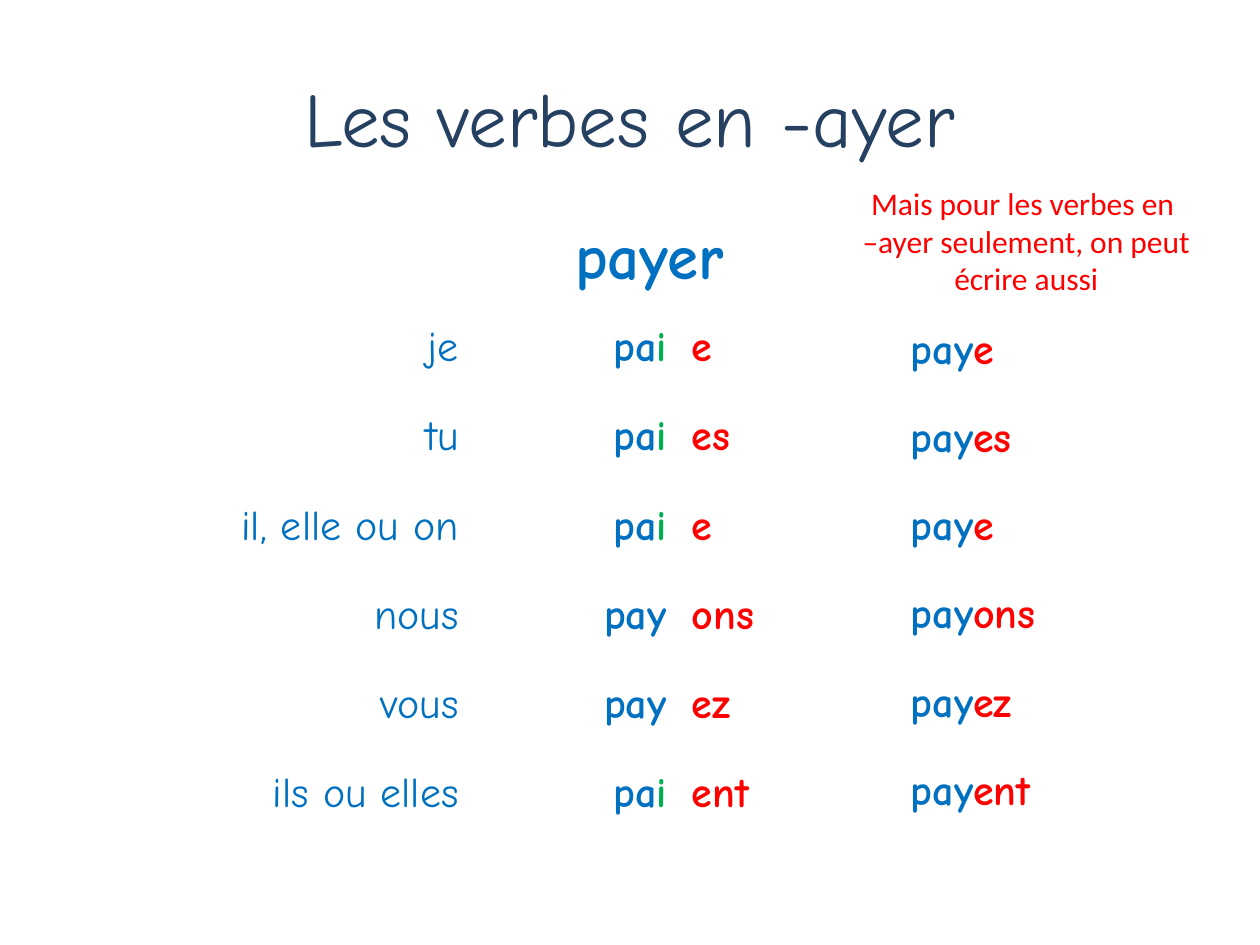
from dataclasses import dataclass

from pptx import Presentation
from pptx.dml.color import RGBColor
from pptx.enum.text import MSO_ANCHOR, PP_ALIGN
from pptx.util import Inches, Pt

LEFT, CENTER, RIGHT = PP_ALIGN.LEFT, PP_ALIGN.CENTER, PP_ALIGN.RIGHT
MIDDLE = MSO_ANCHOR.MIDDLE
TITLE_ONLY = 5
COLUMNS, ROWS = 100, 75


@dataclass(frozen=True)
class Theme:
    navy: str = "254061"
    blue: str = "0070C0"
    green: str = "00B050"
    red: str = "FF0000"
    white: str = "FFFFFF"
    hand: str = "Comic Neue"
    plain: str = "Calibri"
    title: int = 44
    verb: int = 36
    body: int = 24
    note: int = 18


THEME = Theme()


def write(paragraph, text, color=THEME.blue, size=THEME.body, font=THEME.hand,
          bold=False, align=LEFT):
    paragraph.alignment = align
    run = paragraph.add_run()
    run.text = text
    run.font.name = font
    run.font.size = Pt(size)
    run.font.bold = bold
    run.font.color.rgb = RGBColor.from_string(color)


class ConjugationSlide:
    def __init__(self, presentation, theme):
        self.theme = theme
        self.width = presentation.slide_width
        self.height = presentation.slide_height
        layout = presentation.slide_layouts[TITLE_ONLY]
        self.slide = presentation.slides.add_slide(layout)

    def area(self, left, top, width, height):
        column, row = self.width / COLUMNS, self.height / ROWS
        return (round(left * column), round(top * row),
                round(width * column), round(height * row))

    def title(self, text, *place):
        shape = self.slide.shapes.title
        shape.left, shape.top, shape.width, shape.height = self.area(*place)
        shape.text_frame.vertical_anchor = MIDDLE
        write(shape.text_frame.paragraphs[0], text, color=self.theme.navy,
              size=self.theme.title, align=CENTER)

    def text_box(self, lines, *place, line_spacing=None, space_after=0, **style):
        frame = self.slide.shapes.add_textbox(*self.area(*place)).text_frame
        frame.word_wrap = True
        for index, parts in enumerate(lines):
            paragraph = frame.add_paragraph() if index else frame.paragraphs[0]
            paragraph.line_spacing = line_spacing
            paragraph.space_after = Pt(space_after)
            for text, color in parts:
                write(paragraph, text, color=color, **style)

    def cell(self, cell, parts, **style):
        cell.fill.solid()
        cell.fill.fore_color.rgb = RGBColor.from_string(self.theme.white)
        cell.vertical_anchor = MIDDLE
        for text, color in parts:
            write(cell.text_frame.paragraphs[0], text, color=color, **style)

    def verb_table(self, verb, forms, widths, *place):
        theme = self.theme
        table = self.slide.shapes.add_table(
            len(forms) + 1, len(widths), *self.area(*place)).table
        for column, width in zip(table.columns, widths):
            column.width = round(width * self.width / COLUMNS)
        table.cell(0, 0).merge(table.cell(0, len(widths) - 1))
        self.cell(table.cell(0, 0), [(verb, theme.blue)], size=theme.verb,
                  bold=True, align=CENTER)
        for row, (pronoun, stem, changed, ending) in enumerate(forms, 1):
            stem_parts = [(stem, theme.blue)]
            if changed:
                stem_parts.append((changed, theme.green))
            self.cell(table.cell(row, 0), [(pronoun, theme.blue)], align=RIGHT)
            self.cell(table.cell(row, 1), stem_parts, bold=True, align=RIGHT)
            self.cell(table.cell(row, 2), [(ending, theme.red)], bold=True)


def main():
    presentation = Presentation()
    presentation.slide_width, presentation.slide_height = Inches(10), Inches(7.5)
    page = ConjugationSlide(presentation, THEME)
    forms = [
        ("je", "pa", "i", "e"),
        ("tu", "pa", "i", "es"),
        ("il, elle ou on", "pa", "i", "e"),
        ("nous", "pay", "", "ons"),
        ("vous", "pay", "", "ez"),
        ("ils ou elles", "pa", "i", "ent"),
    ]
    alternatives = [[("pay", THEME.blue), (form[-1], THEME.red)] for form in forms]
    note = ["Mais pour les verbes en ", "–ayer seulement, on peut écrire aussi"]

    page.title("Les verbes en -ayer", 5, 3, 90, 12.5)
    page.verb_table("payer", forms, (25.2, 16.5, 37), 12.2, 17, 78.7, 49.6)
    page.text_box(alternatives, 71.3, 25.2, 16.5, 40.4, bold=True,
                  line_spacing=Pt(28), space_after=22.4)
    page.text_box([[(line, THEME.red)] for line in note], 66.5, 14.1, 29.9, 10.1,
                  size=THEME.note, font=THEME.plain, align=CENTER)
    presentation.save("out.pptx")


if __name__ == "__main__":
    main()
